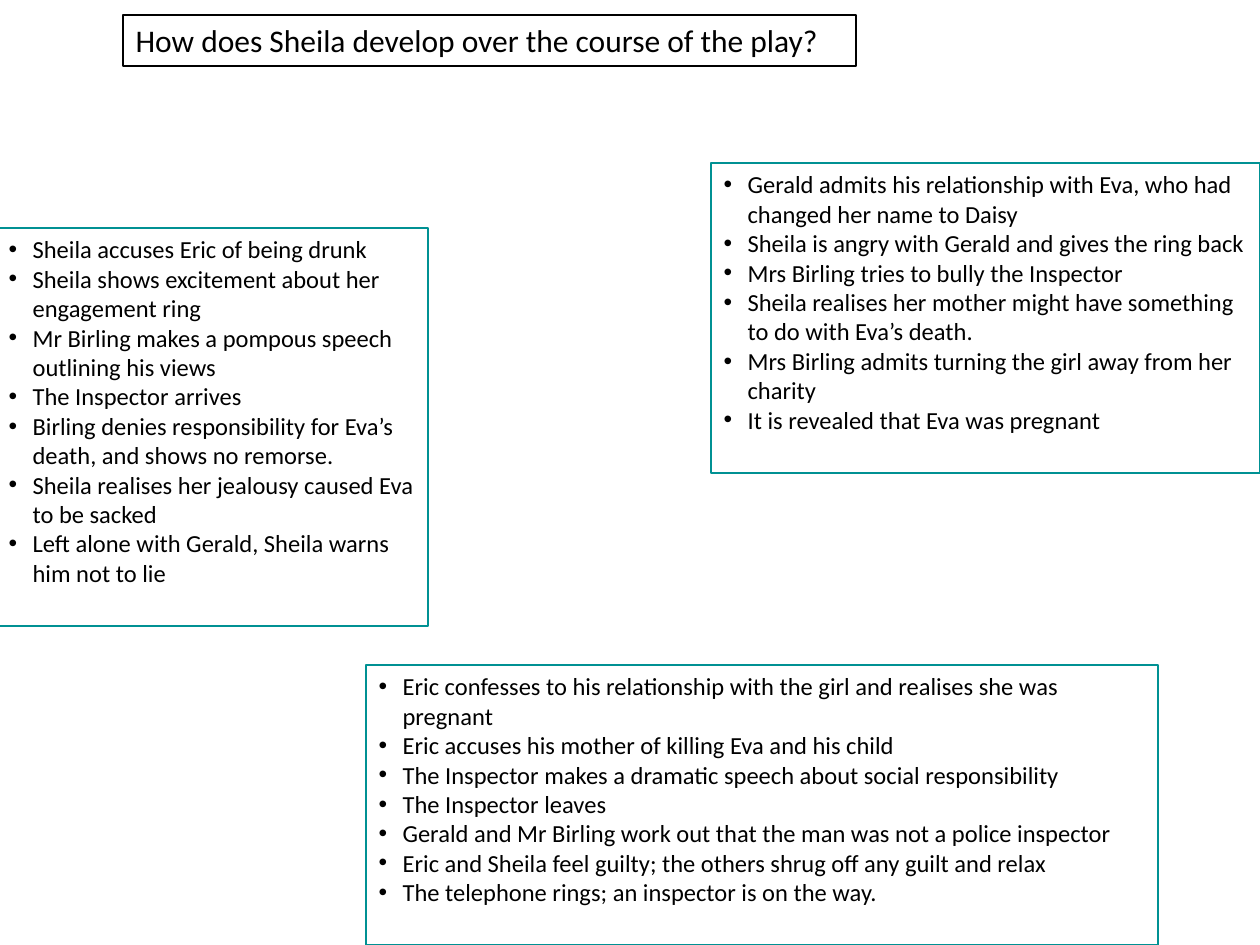
from lxml.etree import SubElement
from pptx import Presentation
from pptx.dml.color import RGBColor
from pptx.enum.text import MSO_ANCHOR, MSO_AUTO_SIZE, PP_ALIGN
from pptx.oxml.ns import qn
from pptx.util import Inches, Pt

PX = Inches(1) // 126
BLACK = RGBColor(0x00, 0x00, 0x00)
TEAL = RGBColor(0x00, 0x91, 0x93)
FONT = "Calibri"
INDENT = 24

TITLE = "How does Sheila develop over the course of the play?"
ACT_ONE = [
    "Sheila accuses Eric of being drunk",
    "Sheila shows excitement about her engagement ring",
    "Mr Birling makes a pompous speech outlining his views",
    "The Inspector arrives",
    "Birling denies responsibility for Eva’s death, and shows no remorse.",
    "Sheila realises her jealousy caused Eva to be sacked",
    "Left alone with Gerald, Sheila warns him not to lie",
]
ACT_TWO = [
    "Gerald admits his relationship with Eva, who had changed her name to Daisy",
    "Sheila is angry with Gerald and gives the ring back",
    "Mrs Birling tries to bully the Inspector",
    "Sheila realises her mother might have something to do with Eva’s death.",
    "Mrs Birling admits turning the girl away from her charity",
    "It is revealed that Eva was pregnant",
]
ACT_THREE = [
    "Eric confesses to his relationship with the girl and realises she was pregnant",
    "Eric accuses his mother of killing Eva and his child",
    "The Inspector makes a dramatic speech about social responsibility",
    "The Inspector leaves",
    "Gerald and Mr Birling work out that the man was not a police inspector",
    "Eric and Sheila feel guilty; the others shrug off any guilt and relax",
    "The telephone rings; an inspector is on the way.",
]


def frame_box(sp, box, color):
    """Place and outline a placeholder and return its text frame."""
    sp.left, sp.top, sp.width, sp.height = (n * PX for n in box)
    sp.fill.background()
    sp.line.color.rgb = color
    sp.line.width = Pt(0.75)
    tf = sp.text_frame
    tf.word_wrap = True
    tf.auto_size = MSO_AUTO_SIZE.NONE
    tf.vertical_anchor = MSO_ANCHOR.TOP
    return tf


def add_text(p, text, size):
    """Add one left-aligned run of plain black text to a paragraph."""
    p.alignment = PP_ALIGN.LEFT
    p.space_before = Pt(0)
    r = p.add_run()
    r.text = text
    r.font.name = FONT
    r.font.size = Pt(size)
    r.font.bold = False
    r.font.color.rgb = BLACK


def add_bullet(p):
    """Give a paragraph a hanging round bullet."""
    pPr = p._p.get_or_add_pPr()
    pPr.set("marL", str(INDENT * PX))
    pPr.set("indent", str(-INDENT * PX))
    SubElement(pPr, qn("a:buFont"), typeface="Arial")
    SubElement(pPr, qn("a:buChar"), char="•")


def fill_title(sp, box, text):
    """Fill the framed title."""
    tf = frame_box(sp, box, BLACK)
    add_text(tf.paragraphs[0], text, 18)


def fill_list(sp, box, items):
    """Fill a framed bullet list."""
    tf = frame_box(sp, box, TEAL)
    for i, item in enumerate(items):
        p = tf.add_paragraph() if i else tf.paragraphs[0]
        add_bullet(p)
        add_text(p, item, 14)


def main():
    """Build and save the slide."""
    prs = Presentation()
    prs.slide_width, prs.slide_height = Inches(10), Inches(7.5)
    s = prs.slides.add_slide(prs.slide_layouts.get_by_name("Comparison"))
    title, first, second, third, spare = s.placeholders
    fill_title(title, (123, 15, 733, 51), TITLE)
    fill_list(first, (-4, 228, 432, 398), ACT_ONE)
    fill_list(second, (711, 163, 549, 310), ACT_TWO)
    fill_list(third, (366, 665, 792, 280), ACT_THREE)
    spare.element.getparent().remove(spare.element)
    prs.save("out.pptx")


if __name__ == "__main__":
    main()
